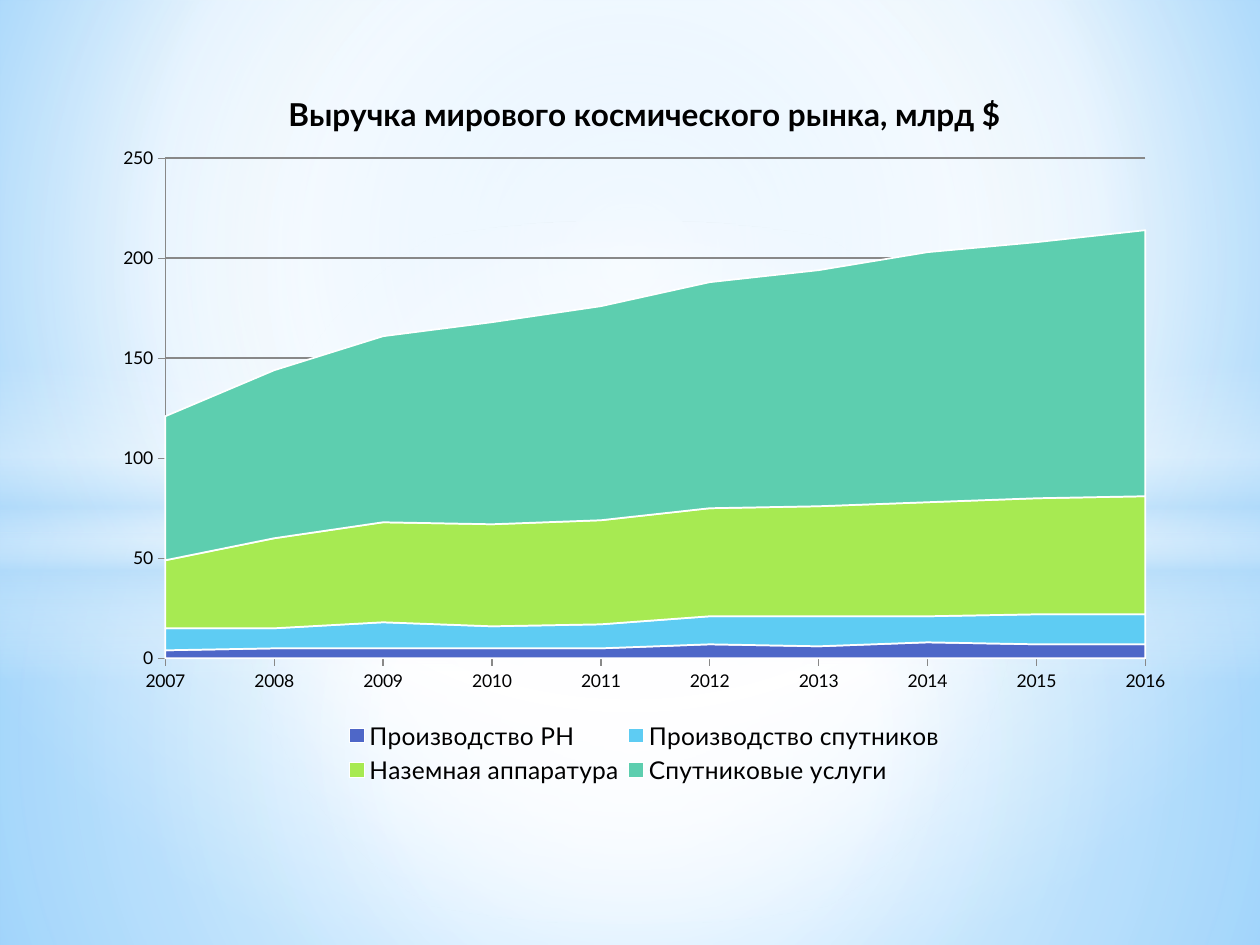
"""Build a slide with a stacked area chart of space market revenue."""
from lxml import etree
from pptx import Presentation
from pptx.chart.data import CategoryChartData
from pptx.dml.color import RGBColor
from pptx.enum.chart import XL_CHART_TYPE, XL_LEGEND_POSITION, XL_TICK_MARK
from pptx.enum.shapes import MSO_SHAPE
from pptx.oxml import parse_xml
from pptx.oxml.ns import nsdecls, qn
from pptx.util import Pt

AREA_STACKED = XL_CHART_TYPE.AREA_STACKED
BOTTOM = XL_LEGEND_POSITION.BOTTOM
CROSS = XL_TICK_MARK.CROSS
RECTANGLE, OVAL = MSO_SHAPE.RECTANGLE, MSO_SHAPE.OVAL

BLACK = RGBColor(0x00, 0x00, 0x00)
WHITE = RGBColor(0xFF, 0xFF, 0xFF)
GRAY = RGBColor(0x88, 0x88, 0x88)
PALE_BLUE = RGBColor(0xB4, 0xDC, 0xFA)
SKY_BLUE = RGBColor(0x9E, 0xD5, 0xFF)
DEEP_BLUE = RGBColor(0x5B, 0xB9, 0xFF)
INDIGO = RGBColor(0x4E, 0x67, 0xC8)
CYAN = RGBColor(0x5E, 0xCC, 0xF3)
LIME = RGBColor(0xA7, 0xEA, 0x52)
TEAL = RGBColor(0x5D, 0xCE, 0xAF)

PX = 914400 // 126
FONT = "Lato"
CENTRE = (50, 50, 50, 50)


def set_gradient(fill, parent, stops, focus=None):
    """Fill with a circular gradient around focus, or a vertical one without it."""
    fill.gradient()
    stop_xml = "".join(
        f'<a:gs pos="{position * 1000}"><a:srgbClr val="{color}">'
        f'<a:alpha val="{opacity * 1000}"/></a:srgbClr></a:gs>'
        for position, color, opacity in stops
    )
    if focus:
        sides = " ".join(f'{side}="{value * 1000}"' for side, value in zip("ltrb", focus))
        direction = f'<a:path path="circle"><a:fillToRect {sides}/></a:path>'
    else:
        direction = '<a:lin ang="5400000" scaled="0"/>'
    old = next(parent.iter(qn("a:gradFill")))
    old.getparent().replace(old, parse_xml(
        f'<a:gradFill {nsdecls("a")} rotWithShape="1"><a:gsLst>{stop_xml}</a:gsLst>'
        f'{direction}</a:gradFill>'))


def set_layout(element, index, left, top, width, height, inner=False):
    """Place a chart part by fractions of the chart area."""
    for old in element.findall(qn("c:layout")):
        element.remove(old)
    layout = etree.Element(qn("c:layout"))
    manual = etree.SubElement(layout, qn("c:manualLayout"))
    settings = [("layoutTarget", "inner")] if inner else []
    settings += [("xMode", "edge"), ("yMode", "edge"),
                 ("x", left), ("y", top), ("w", width), ("h", height)]
    for name, value in settings:
        etree.SubElement(manual, qn(f"c:{name}")).set("val", str(value))
    element.insert(index, layout)


presentation = Presentation()
presentation.slide_width = 1260 * PX
presentation.slide_height = 945 * PX
slide = presentation.slides.add_slide(presentation.slide_layouts[6])

background_stops = [(0, SKY_BLUE, 100), (60, WHITE, 100), (100, DEEP_BLUE, 100)]
set_gradient(slide.background.fill, slide.element, background_stops, (20, 10, 20, 60))

glows = [
    (RECTANGLE, 533, 412, [(0, WHITE, 91), (37, WHITE, 76), (100, PALE_BLUE, 79)], CENTRE),
    (RECTANGLE, 0, 533, [(0, WHITE, 89), (48, WHITE, 62), (100, PALE_BLUE, 79)], CENTRE),
    (RECTANGLE, 365, 315, [(0, WHITE, 0), (29, WHITE, 30), (45, PALE_BLUE, 40),
                           (55, WHITE, 26), (65, PALE_BLUE, 60), (100, WHITE, 0)], None),
    (OVAL, 221, 703, [(0, WHITE, 100), (54, WHITE, 0)], CENTRE),
]
for kind, top, height, stops, focus in glows:
    shape = slide.shapes.add_shape(kind, 0, top * PX, 1260 * PX, height * PX)
    shape.shadow.inherit = False
    shape.line.fill.background()
    set_gradient(shape.fill, shape.element, stops, focus)

revenue = [
    ("Производство РН", INDIGO, (4, 5, 5, 5, 5, 7, 6, 8, 7, 7)),
    ("Производство спутников", CYAN, (11, 10, 13, 11, 12, 14, 15, 13, 15, 15)),
    ("Наземная аппаратура", LIME, (34, 45, 50, 51, 52, 54, 55, 57, 58, 59)),
    ("Спутниковые услуги", TEAL, (72, 84, 93, 101, 107, 113, 118, 125, 128, 133)),
]
chart_data = CategoryChartData(number_format="0")
chart_data.categories = [str(year) for year in range(2007, 2017)]
for name, color, values in revenue:
    chart_data.add_series(name, values)
chart = slide.shapes.add_chart(
    AREA_STACKED, 100 * PX, 64 * PX, 1089 * PX, 725 * PX, chart_data).chart
chart.font.name = FONT
chart.font.size = Pt(10)
chart.font.color.rgb = BLACK

for series, (name, color, values) in zip(chart.plots[0].series, revenue):
    series.format.fill.solid()
    series.format.fill.fore_color.rgb = color
    series.format.line.color.rgb = WHITE
    series.format.line.width = Pt(1)

chart.has_title = True
title_run = chart.chart_title.text_frame.paragraphs[0].add_run()
title_run.text = "Выручка мирового космического рынка, млрд $"
title_run.font.name = FONT
title_run.font.size = Pt(18)
title_run.font.bold = True
title_run.font.color.rgb = BLACK
chart.chart_title.include_in_layout = False

for axis in (chart.category_axis, chart.value_axis):
    axis.major_tick_mark = CROSS
    axis.format.line.color.rgb = GRAY
    axis.format.line.width = Pt(0.75)
value_axis = chart.value_axis
value_axis.minimum_scale = 0
value_axis.maximum_scale = 250
value_axis.major_unit = 50
value_axis.tick_labels.number_format = "0"
value_axis.tick_labels.number_format_is_linked = False
value_axis.has_major_gridlines = True
value_axis.major_gridlines.format.line.color.rgb = GRAY
value_axis.major_gridlines.format.line.width = Pt(1)
next(chart.element.iter(qn("c:crossBetween"))).set("val", "midCat")

chart.has_legend = True
legend = chart.legend
legend.position = BOTTOM
legend.include_in_layout = False
legend.font.name = FONT
legend.font.size = Pt(14)
legend.font.color.rgb = BLACK
set_layout(next(chart.element.iter(qn("c:legend"))), 1, 0.22, 0.9, 0.56, 0.1)
set_layout(next(chart.element.iter(qn("c:plotArea"))), 0, 0.06, 0.13, 0.9, 0.69, inner=True)

presentation.save("out.pptx")
